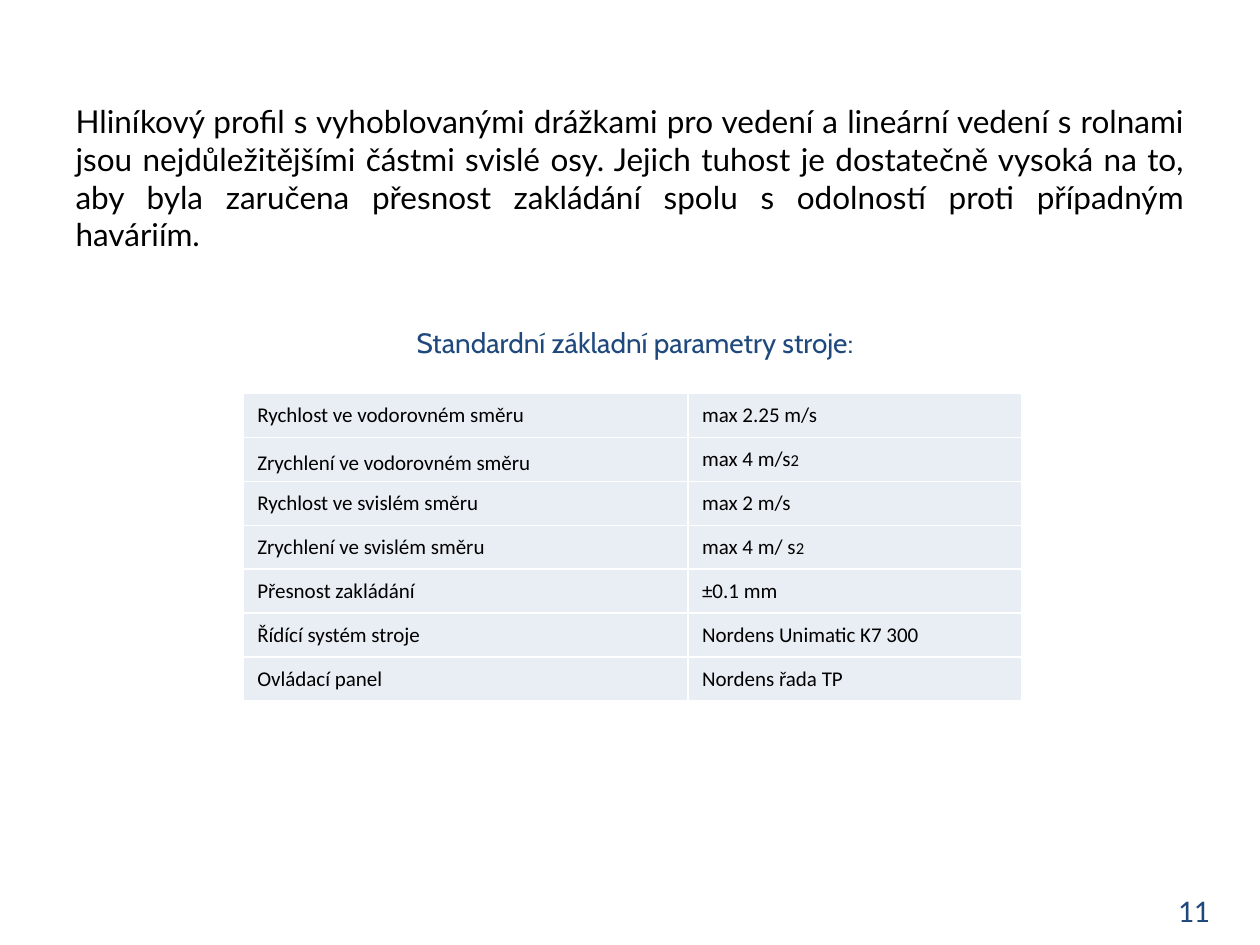
from lxml.etree import SubElement as Sub
from pptx import Presentation
from pptx.dml.color import RGBColor
from pptx.enum.text import MSO_ANCHOR as Anchor, MSO_AUTO_SIZE as Fit, PP_ALIGN as Align
from pptx.oxml.ns import qn
from pptx.util import Pt

BLACK = RGBColor(0, 0, 0)
NAVY = RGBColor(0x1F, 0x49, 0x7D)
PALE = RGBColor(0xE9, 0xED, 0xF4)
WHITE = RGBColor(0xFF, 0xFF, 0xFF)

INTRO = ("Hliníkový profil s vyhoblovanými drážkami pro vedení a lineární vedení "
         "s rolnami jsou nejdůležitějšími částmi svislé osy. Jejich tuhost je "
         "dostatečně vysoká na to, aby byla zaručena přesnost zakládání spolu "
         "s odolností proti případným haváriím.")

# Parameter, value, small trailing digit
ROWS = [
    ("Rychlost ve vodorovném směru", "max 2.25 m/s", ""),
    ("Zrychlení ve vodorovném směru", "max 4 m/s", "2"),
    ("Rychlost ve svislém směru", "max 2 m/s", ""),
    ("Zrychlení ve svislém směru", "max 4 m/ s", "2"),
    ("Přesnost zakládání", "±0.1 mm", ""),
    ("Řídící systém stroje", "Nordens Unimatic K7 300", ""),
    ("Ovládací panel", "Nordens řada TP", ""),
]
WIDTHS = (254.2, 190.8)
ROW_H = 25.1
LOW_ROW = 1  # its label sits slightly lower


def style(par, name, size, color, align=Align.LEFT):
    par.alignment = align
    par.font.name = name
    par.font.size = Pt(size)
    par.font.color.rgb = color


def add_body(slide, text, box):
    body = slide.placeholders[1]
    body.left, body.top, body.width, body.height = map(Pt, box)
    frame = body.text_frame
    frame.text = text
    frame.auto_size = Fit.NONE
    par = frame.paragraphs[0]
    style(par, "Lato", 18, BLACK, Align.JUSTIFY)
    # Plain paragraph: no bullet, no hanging indent
    props = par._p.get_or_add_pPr()
    props.set("marL", "0")
    props.set("indent", "0")
    Sub(props, qn("a:buNone"))


def add_label(slide, text, box, name, size, anchor=Anchor.TOP):
    frame = slide.shapes.add_textbox(*map(Pt, box)).text_frame
    frame.word_wrap = True
    frame.vertical_anchor = anchor
    frame.text = text
    style(frame.paragraphs[0], name, size, NAVY, Align.CENTER)


def add_rules(cell):
    props = cell._tc.get_or_add_tcPr()
    for side in ("lnL", "lnR", "lnT", "lnB"):
        line = Sub(props, qn("a:" + side), w=str(Pt(1)))
        Sub(Sub(line, qn("a:solidFill")), qn("a:srgbClr"), val=str(WHITE))


def fill_cell(cell, text, small=""):
    add_rules(cell)
    cell.fill.solid()
    cell.fill.fore_color.rgb = PALE
    cell.vertical_anchor = Anchor.MIDDLE
    cell.margin_left = Pt(8)
    cell.margin_top = cell.margin_right = cell.margin_bottom = 0
    par = cell.text_frame.paragraphs[0]
    par.add_run().text = text
    style(par, "Calibri", 12, BLACK)
    if small:
        run = par.add_run()
        run.text = small
        run.font.size = Pt(9.5)


def add_grid(slide, left, top):
    grid = slide.shapes.add_table(len(ROWS), len(WIDTHS), Pt(left), Pt(top),
                                  Pt(sum(WIDTHS)), Pt(ROW_H * len(ROWS))).table
    grid.first_row = grid.horz_banding = False
    for col, width in zip(grid.columns, WIDTHS):
        col.width = Pt(width)
    for i, (label, value, small) in enumerate(ROWS):
        grid.rows[i].height = Pt(ROW_H)
        fill_cell(grid.cell(i, 0), label)
        fill_cell(grid.cell(i, 1), value, small)
    grid.cell(LOW_ROW, 0).margin_top = Pt(4)


def main():
    deck = Presentation()
    deck.slide_width, deck.slide_height = Pt(720), Pt(540)
    slide = deck.slides.add_slide(deck.slide_layouts[1])
    # This slide has no title
    title = slide.shapes.title._element
    title.getparent().remove(title)

    # Introduction
    add_body(slide, INTRO, (36, 54.7, 648, 108))
    # Parameter table and its heading
    add_grid(slide, 139, 224.9)
    add_label(slide, "Standardní základní parametry stroje:",
              (139, 182.2, 447.8, 26.6), "Cabin", 16, Anchor.MIDDLE)
    # Page number
    add_label(slide, "11", (649.4, 505.4, 65.5, 29), "Calibri", 18)
    deck.save("out.pptx")


if __name__ == "__main__":
    main()
